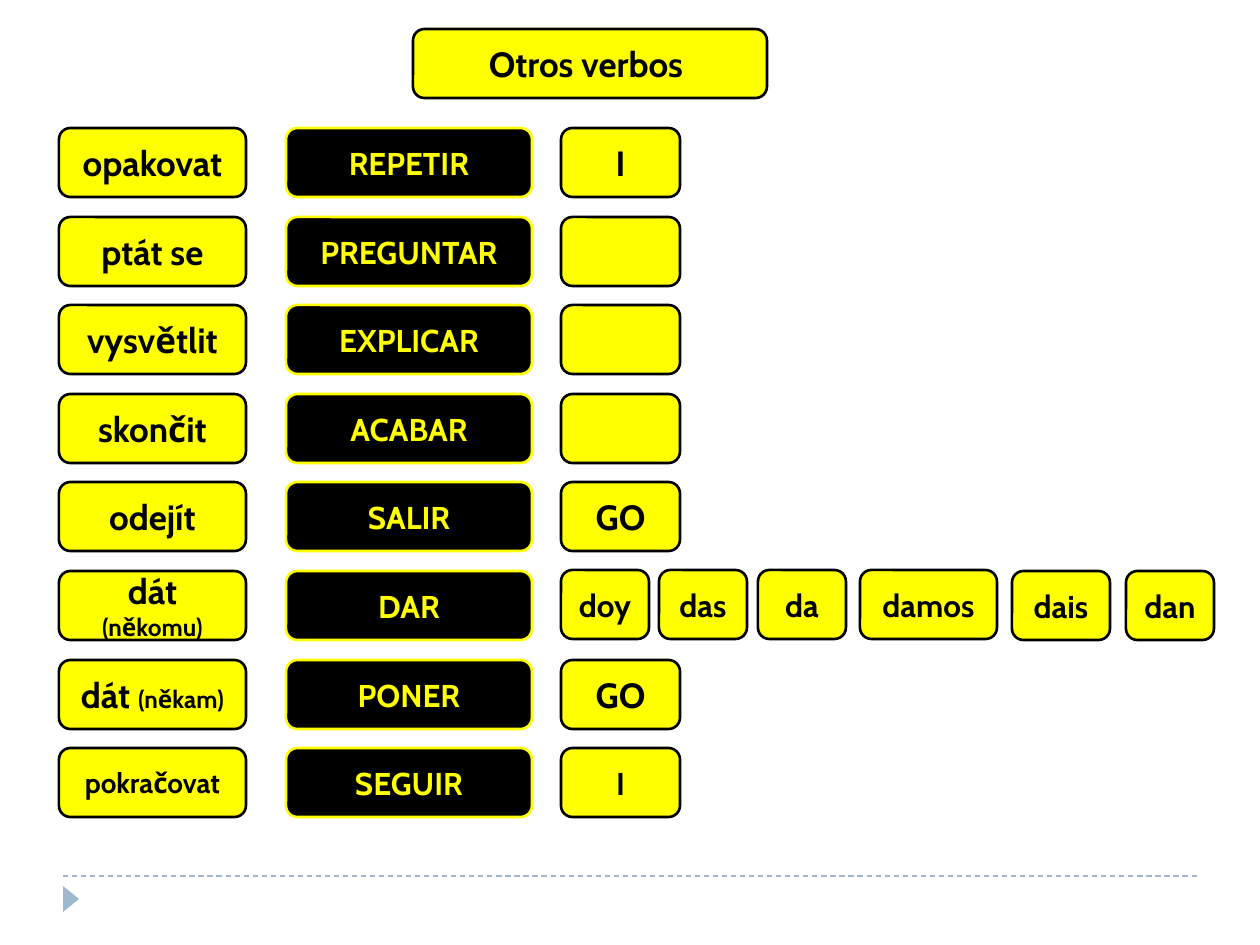
from pptx import Presentation
from pptx.dml.color import RGBColor
from pptx.enum.dml import MSO_LINE_DASH_STYLE as Dash
from pptx.enum.shapes import MSO_CONNECTOR as Connector, MSO_SHAPE as Shape
from pptx.enum.text import MSO_ANCHOR as Anchor, PP_ALIGN as Align
from pptx.oxml.ns import qn
from pptx.util import Emu, Pt

PX = 914400 / 126
FONT = "Cabin"
YELLOW = RGBColor(0xFF, 0xFF, 0x00)
BLACK = RGBColor(0x00, 0x00, 0x00)
BLUE = RGBColor(0x9F, 0xB8, 0xCD)

BOX_HEIGHT = 69
FIRST_ROW_TOP = 128
ROW_PITCH = 88.6
CZECH_LEFT, CZECH_WIDTH = 59, 187
SPANISH_LEFT, SPANISH_WIDTH = 286, 246
CHANGE_LEFT, CHANGE_WIDTH = 561, 119

VERBS = [
    ([("opakovat", 20)], "REPETIR", [("I", 20)]),
    ([("ptát se", 20)], "PREGUNTAR", []),
    ([("vysvětlit", 20)], "EXPLICAR", []),
    ([("skončit", 20)], "ACABAR", []),
    ([("odejít", 20)], "SALIR", [("GO", 20)]),
    ([("dát ", 20), ("(někomu)", 14)], "DAR", None),
    ([("dát ", 20), ("(někam)", 14)], "PONER", [("GO", 20)]),
    ([("pokračovat", 16)], "SEGUIR", [("I", 18)]),
]
DAR_FORMS = [
    ("doy", 561, 570, 88),
    ("das", 659, 570, 88),
    ("da", 758, 570, 88),
    ("damos", 860, 570, 137),
    ("dais", 1012, 571, 98),
    ("dan", 1126, 571, 88),
]


def px(value):
    return Emu(round(value * PX))


def add_box(slide, left, top, width, runs, fill=YELLOW, ink=BLACK):
    box = slide.shapes.add_shape(
        Shape.ROUNDED_RECTANGLE, px(left), px(top), px(width), px(BOX_HEIGHT))
    box.shadow.inherit = False
    box.fill.solid()
    box.fill.fore_color.rgb = fill
    box.line.color.rgb = ink
    box.line.width = Pt(1.5)
    if not runs:
        return
    frame = box.text_frame
    frame.word_wrap = True
    frame.vertical_anchor = Anchor.MIDDLE
    paragraph = frame.paragraphs[0]
    paragraph.alignment = Align.CENTER
    paragraph.font.name = FONT
    paragraph.font.bold = True
    paragraph.font.color.rgb = ink
    paragraph.font.size = Pt(runs[0][1])
    for text, size in runs:
        run = paragraph.add_run()
        run.text = text
        if size != runs[0][1]:
            run.font.size = Pt(size)


def add_footer_line(slide):
    line = slide.shapes.add_connector(
        Connector.STRAIGHT, px(63), px(876), px(1197), px(876))
    line.line.color.rgb = BLUE
    line.line.width = Pt(0.75)
    line.line.dash_style = Dash.DASH
    properties = line._element.spPr
    properties.append(properties.makeelement(qn("a:effectLst"), {}))


def add_footer_marker(slide):
    marker = slide.shapes.add_shape(
        Shape.ISOSCELES_TRIANGLE, px(58), px(891), px(26), px(16))
    marker.rotation = 90
    marker.shadow.inherit = False
    marker.fill.solid()
    marker.fill.fore_color.rgb = BLUE
    marker.line.fill.background()


def add_verb_rows(slide):
    for row, (czech, spanish, change) in enumerate(VERBS):
        top = round(FIRST_ROW_TOP + row * ROW_PITCH)
        add_box(slide, CZECH_LEFT, top, CZECH_WIDTH, czech)
        add_box(slide, SPANISH_LEFT, top, SPANISH_WIDTH, [(spanish, 18)],
                fill=BLACK, ink=YELLOW)
        if change is not None:
            add_box(slide, CHANGE_LEFT, top, CHANGE_WIDTH, change)


def main():
    presentation = Presentation()
    presentation.slide_width = px(1260)
    presentation.slide_height = px(945)
    slide = presentation.slides.add_slide(presentation.slide_layouts[6])
    add_footer_line(slide)
    add_footer_marker(slide)
    add_box(slide, 413, 29, 354, [("Otros verbos ", 20)])
    add_verb_rows(slide)
    for form, left, top, width in DAR_FORMS:
        add_box(slide, left, top, width, [(form, 18)])
    presentation.save("out.pptx")


if __name__ == "__main__":
    main()
